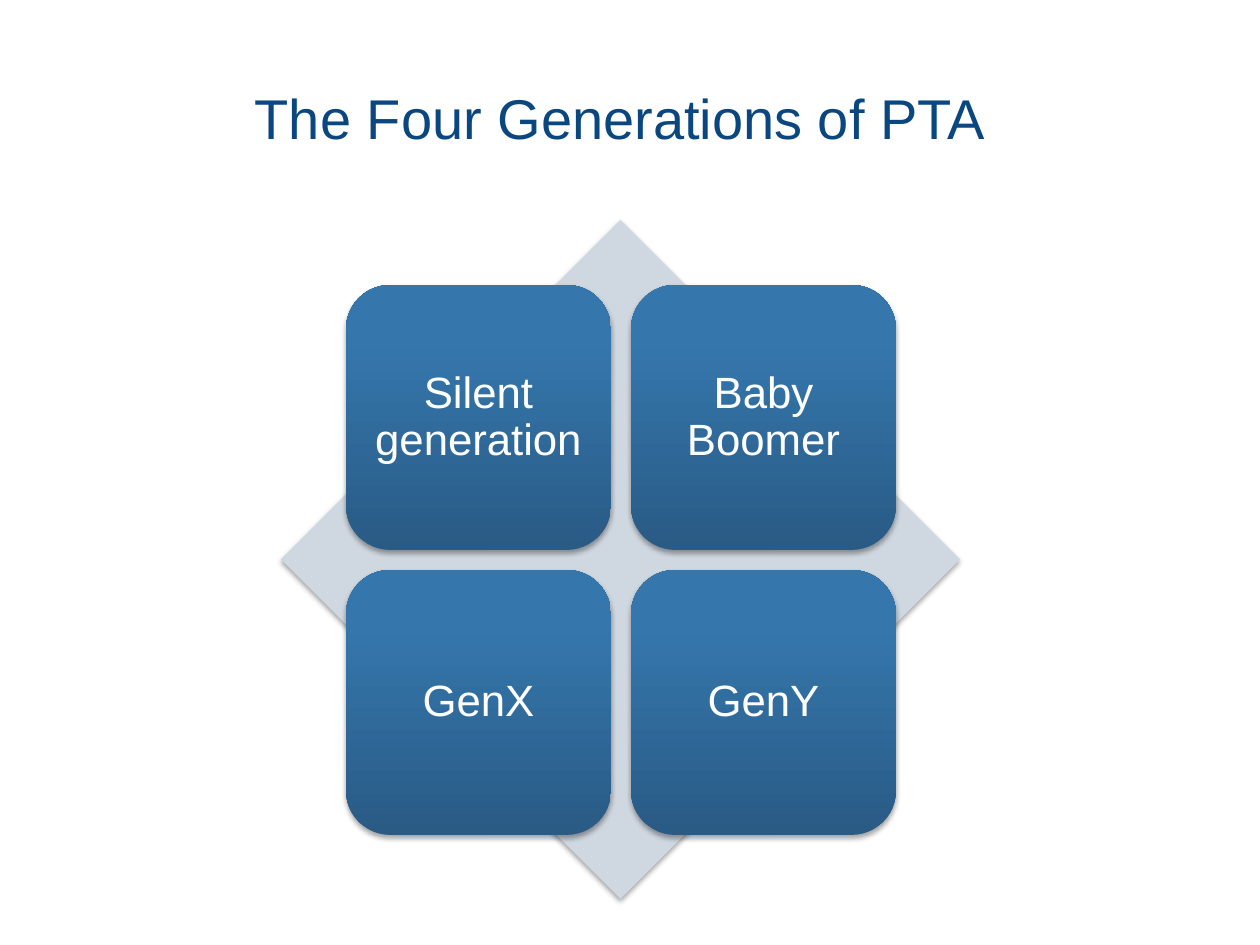
from copy import deepcopy

from lxml import etree
from pptx import Presentation
from pptx.dml.color import RGBColor
from pptx.enum.shapes import MSO_SHAPE
from pptx.enum.text import MSO_ANCHOR, PP_ALIGN
from pptx.oxml.ns import qn
from pptx.util import Pt

DIAMOND = MSO_SHAPE.DIAMOND
ROUNDED_RECTANGLE = MSO_SHAPE.ROUNDED_RECTANGLE
MIDDLE = MSO_ANCHOR.MIDDLE
CENTER = PP_ALIGN.CENTER

NAVY = RGBColor(0x0A, 0x47, 0x80)
WHITE = RGBColor(0xFF, 0xFF, 0xFF)
PALE_BLUE = RGBColor(0xCF, 0xD7, 0xE0)
TILE_STOPS = [
    (0, RGBColor(0x29, 0x5B, 0x85)),
    (0.8, RGBColor(0x35, 0x77, 0xAD)),
    (1, RGBColor(0x33, 0x77, 0xB0)),
]

FONT = "Arial"
TITLE_ONLY_LAYOUT = 5
TILE_SIZE = 265
TILE_GAP = 20
TILE_LEFT = 346
TILE_TOP = 285
GENERATIONS = [["Silent generation", "Baby Boomer"], ["GenX", "GenY"]]


def px(length):
    return round(length * 914400 / 126)


class GenerationsSlide:
    def __init__(self, presentation):
        layout = presentation.slide_layouts[TITLE_ONLY_LAYOUT]
        self.slide = presentation.slides.add_slide(layout)

    def add_text(self, shape, text, size, color, inset):
        frame = shape.text_frame
        frame.word_wrap = True
        frame.vertical_anchor = MIDDLE
        frame.margin_left = frame.margin_right = px(inset)
        frame.margin_top = frame.margin_bottom = px(inset)
        paragraph = frame.paragraphs[0]
        paragraph.alignment = CENTER
        run = paragraph.add_run()
        run.text = text
        run.font.name = FONT
        run.font.size = Pt(size)
        run.font.color.rgb = color
        return paragraph

    def title(self, text, left, top, width, height):
        shape = self.slide.shapes.title
        shape.left, shape.top = px(left), px(top)
        shape.width, shape.height = px(width), px(height)
        self.add_text(shape, text, 32, NAVY, 6)

    def square(self, preset, left, top, size):
        shape = self.slide.shapes.add_shape(
            preset, px(left), px(top), px(size), px(size)
        )
        shape.line.fill.background()
        self.add_shadow(shape)
        return shape

    def add_shadow(self, shape):
        shape.shadow.inherit = False
        effects = shape._element.spPr.find(qn("a:effectLst"))
        shadow = etree.SubElement(
            effects,
            qn("a:outerShdw"),
            blurRad=str(Pt(3.1)),
            dist=str(Pt(1.8)),
            dir="5400000",
            rotWithShape="0",
        )
        color = etree.SubElement(shadow, qn("a:srgbClr"), val="000000")
        etree.SubElement(color, qn("a:alpha"), val="35000")

    def diamond(self, left, top, size):
        shape = self.square(DIAMOND, left, top, size)
        shape.fill.solid()
        shape.fill.fore_color.rgb = PALE_BLUE

    def tile(self, text, left, top):
        shape = self.square(ROUNDED_RECTANGLE, left, top, TILE_SIZE)
        shape.fill.gradient()
        shape.fill.gradient_angle = 90
        stop_list = shape._element.spPr.find(".//" + qn("a:gsLst"))
        stop_list.append(deepcopy(stop_list[0]))
        for stop, (position, color) in zip(shape.fill.gradient_stops, TILE_STOPS):
            stop.position = position
            stop.color.rgb = color
        paragraph = self.add_text(shape, text, 25, WHITE, 13)
        paragraph.line_spacing = 0.9


def main():
    presentation = Presentation()
    presentation.slide_width = px(1260)
    presentation.slide_height = px(945)

    slide = GenerationsSlide(presentation)
    slide.title("The Four Generations of PTA", 44, 38, 1153, 158)
    slide.diamond(281, 220, 679)
    step = TILE_SIZE + TILE_GAP
    for row, names in enumerate(GENERATIONS):
        for column, name in enumerate(names):
            slide.tile(name, TILE_LEFT + column * step, TILE_TOP + row * step)

    presentation.save("out.pptx")


if __name__ == "__main__":
    main()
